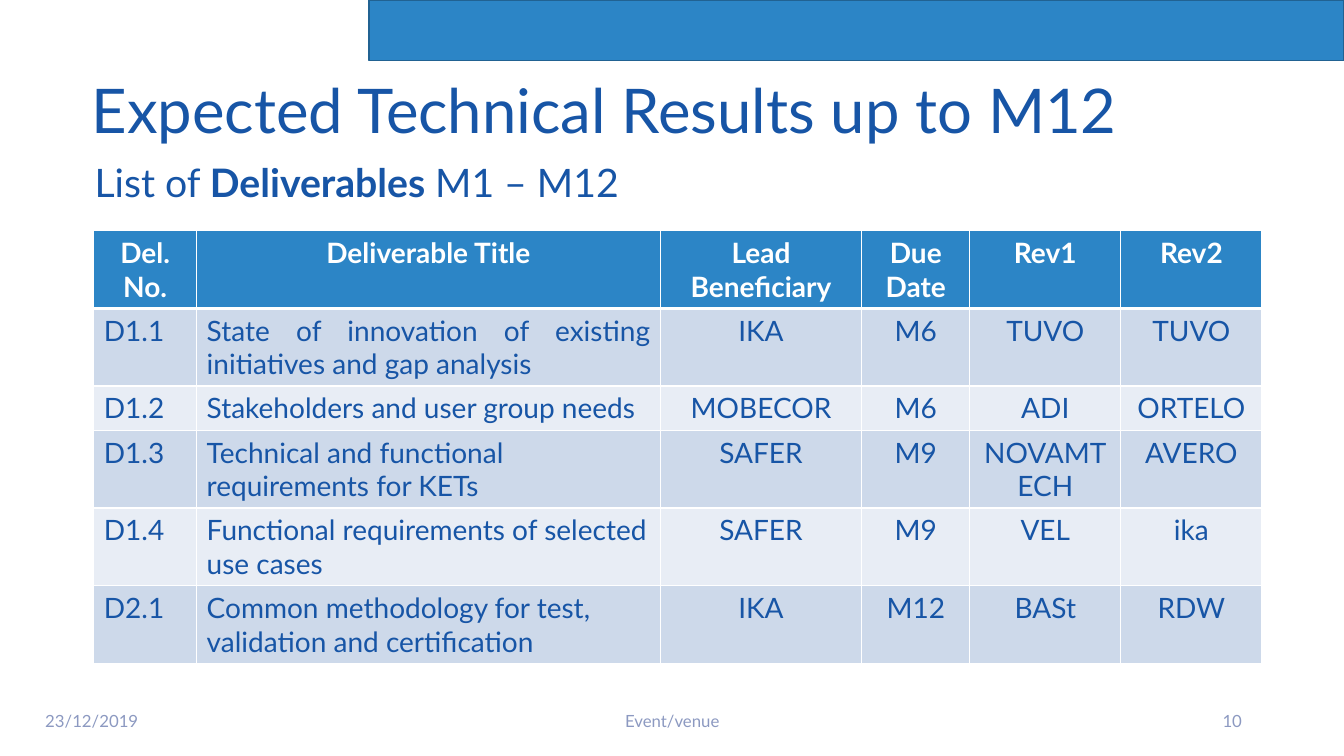
import dataclasses
import typing

import lxml.etree
import pptx
import pptx.dml.color
import pptx.enum.shapes
import pptx.enum.text
import pptx.oxml.ns
import pptx.util

ALIGN = pptx.enum.text.PP_ALIGN
ANCHOR = pptx.enum.text.MSO_ANCHOR
WIDE = pptx.util.Inches(13.333)
HIGH = pptx.util.Inches(7.5)
COLORS = {
    "bar": "2C85C6",
    "edge": "216292",
    "text": "1755A6",
    "foot": "8C99C1",
    "dark": "CDD9EA",
    "pale": "E8EDF5",
    "white": "FFFFFF",
}


@dataclasses.dataclass
class Area:
    x: float
    y: float
    w: float
    h: float

    def box(self) -> tuple[int, int, int, int]:
        return across(self.x), down(self.y), across(self.w), down(self.h)


@dataclasses.dataclass
class Label:
    area: Area
    runs: list[tuple[str, bool]]
    size: int
    color: str = "text"
    align: typing.Any = ALIGN.LEFT
    anchor: typing.Any = ANCHOR.TOP
    space: float = 1.0


@dataclasses.dataclass
class Column:
    head: str
    width: float
    align: typing.Any = ALIGN.CENTER


def across(share: float) -> int:
    return round(WIDE * share / 100)


def down(share: float) -> int:
    return round(HIGH * share / 100)


def tint(name: str) -> pptx.dml.color.RGBColor:
    return pptx.dml.color.RGBColor.from_string(COLORS[name])


def style(font: typing.Any, size: int, color: str, bold: bool = False) -> None:
    form = {"name": "Lato", "size": pptx.util.Pt(size), "bold": bold}
    for key, value in form.items():
        setattr(font, key, value)
    font.color.rgb = tint(color)


def write(slide: typing.Any, label: Label) -> None:
    frame = slide.shapes.add_textbox(*label.area.box()).text_frame
    form = {"word_wrap": True, "vertical_anchor": label.anchor}
    for key, value in form.items():
        setattr(frame, key, value)
    para = frame.paragraphs[0]
    para.alignment = label.align
    para.line_spacing = label.space
    for text, bold in label.runs:
        run = para.add_run()
        run.text = text
        style(run.font, label.size, label.color, bold)


def border(cell: typing.Any, sides: dict[str, int]) -> None:
    props = cell._tc.get_or_add_tcPr()
    name = pptx.oxml.ns.qn
    for side, width in sides.items():
        line = lxml.etree.SubElement(props, name(f"a:ln{side}"), w=str(pptx.util.Pt(width)))
        fill = lxml.etree.SubElement(line, name("a:solidFill"))
        lxml.etree.SubElement(fill, name("a:srgbClr"), val=COLORS["white"])


def draw_bar(slide: typing.Any, area: Area) -> None:
    bar = slide.shapes.add_shape(pptx.enum.shapes.MSO_SHAPE.RECTANGLE, *area.box())
    bar.shadow.inherit = False
    bar.fill.solid()
    bar.fill.fore_color.rgb = tint("bar")
    bar.line.color.rgb = tint("edge")
    bar.line.width = pptx.util.Pt(1)


def draw_table(slide: typing.Any, x: float, y: float, cols: list[Column],
               rows: list[list[str]], tall: list[float]) -> None:
    area = Area(x, y, sum(col.width for col in cols), sum(tall))
    grid = [[col.head for col in cols], *rows]
    table = slide.shapes.add_table(len(grid), len(cols), *area.box()).table
    for part, col in zip(table.columns, cols):
        part.width = across(col.width)
    for part, height in zip(table.rows, tall):
        part.height = down(height)
    for r, row in enumerate(grid):
        back = "bar" if r == 0 else ("pale", "dark")[r % 2]
        sides = {"L": 1, "R": 1, "T": 3 if r == 1 else 1, "B": 3 if r == 0 else 1}
        for c, (text, col) in enumerate(zip(row, cols)):
            cell = table.cell(r, c)
            border(cell, sides)
            cell.fill.solid()
            cell.fill.fore_color.rgb = tint(back)
            cell.text = text
            align = ALIGN.CENTER if r == 0 else col.align
            if c == 1 and r in (1, 2):
                align = ALIGN.JUSTIFY
            for para in cell.text_frame.paragraphs:
                para.alignment = align
                for run in para.runs:
                    style(run.font, 20, "white" if r == 0 else "text", r == 0)


LABELS = [
    Label(Area(6.08, 10, 87.3, 13.2), [("Expected Technical Results up to M12", False)], 44, space=0.9),
    Label(Area(6.3, 20.93, 86.25, 8),
          [("List of ", False), ("Deliverables", True), (" M1 – M12", False)], 28, space=0.9),
]
FOOT = [
    (2.63, 22.5, "23/12/2019", ALIGN.LEFT),
    (33.15, 33.75, "Event/venue", ALIGN.CENTER),
    (70.65, 22.5, "10", ALIGN.RIGHT),
]
LABELS += [
    Label(Area(x, 92.67, w, 5.33), [(text, False)], 12, "foot", align, ANCHOR.MIDDLE)
    for x, w, text, align in FOOT
]
COLS = [
    Column("Del.\nNo.", 7.65, ALIGN.LEFT),
    Column("Deliverable Title", 34.5, ALIGN.LEFT),
    Column("Lead Beneficiary", 15),
    Column("Due Date", 8.03),
    Column("Rev1", 11.25),
    Column("Rev2", 10.5),
]
ROWS = [
    ["D1.1", "State of innovation of existing initiatives and gap analysis", "IKA", "M6", "TUVO", "TUVO"],
    ["D1.2", "Stakeholders and user group needs", "MOBECOR", "M6", "ADI", "ORTELO"],
    ["D1.3", "Technical and functional requirements for KETs", "SAFER", "M9", "NOVAMTECH", "AVERO"],
    ["D1.4", "Functional requirements of selected use cases", "SAFER", "M9", "VEL", "ika"],
    ["D2.1", "Common methodology for test, validation and certification", "IKA", "M12", "BASt", "RDW"],
]
TALL = [10.27, 10.27, 5.87, 10.27, 10.27, 10.27]


def main() -> None:
    deck = pptx.Presentation()
    deck.slide_width, deck.slide_height = WIDE, HIGH
    slide = deck.slides.add_slide(deck.slide_layouts[6])
    draw_bar(slide, Area(27.45, 0, 72.55, 8))
    for label in LABELS:
        write(slide, label)
    draw_table(slide, 6.98, 30.53, COLS, ROWS, TALL)
    deck.save("out.pptx")


if __name__ == "__main__":
    main()
